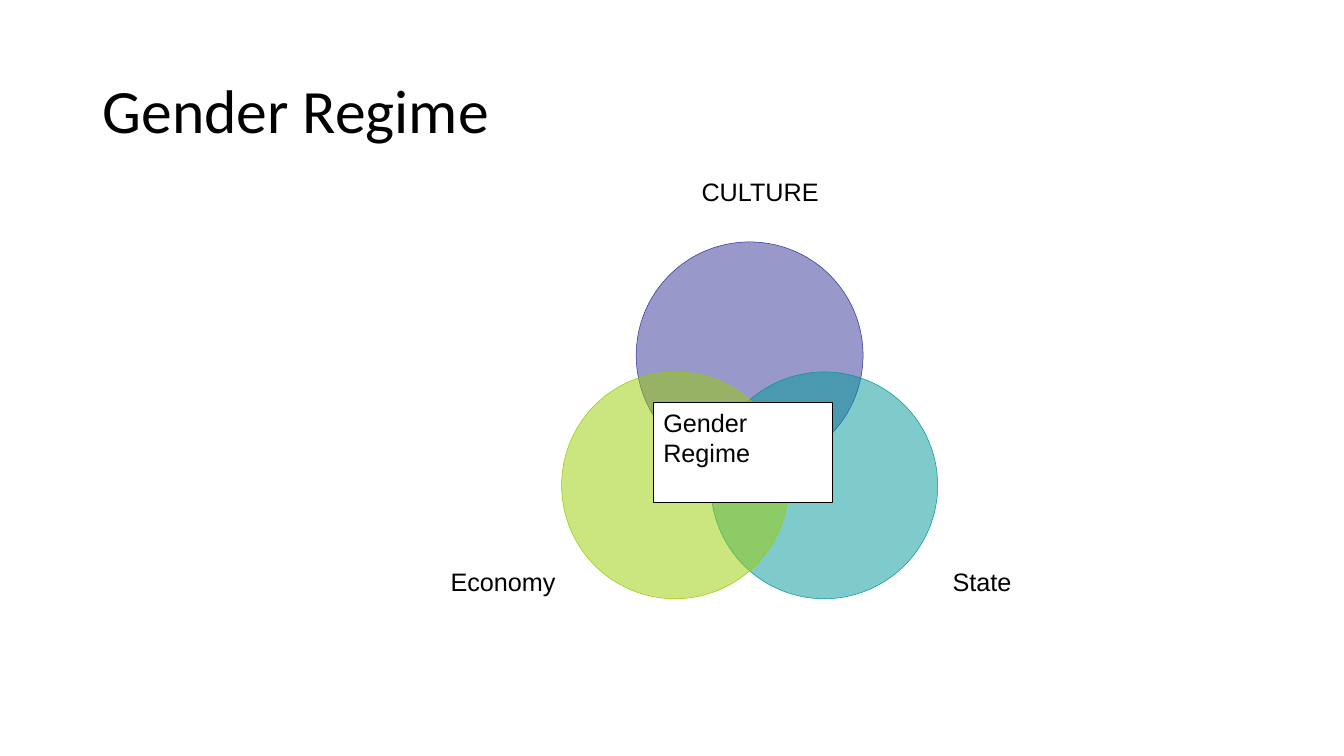
from lxml.etree import SubElement
from pptx import Presentation
from pptx.dml.color import RGBColor
from pptx.enum.shapes import MSO_SHAPE
from pptx.enum.text import MSO_ANCHOR, PP_ALIGN
from pptx.oxml.ns import qn
from pptx.util import Inches, Pt

COLORS = {
    "text": "000000",
    "box": "FFFFFF",
    "culture": "333399",
    "state": "009999",
    "economy": "99CC00",
}
DIAMETER = 2.25

# Circle position, label text and label box for each part of the regime
SPHERES = [
    ("culture", (6.31, 2.4), "CULTURE", (6.86, 1.62, 1.55, 0.56)),
    ("state", (7.05, 3.69), "State", (9.35, 5.49, 1.15, 0.56)),
    ("economy", (5.57, 3.69), "Economy", (4.37, 5.49, 1.48, 0.56)),
]


def color(name):
    return RGBColor.from_string(COLORS[name])


def write(shape, text, size=18, font="Arial", anchor=MSO_ANCHOR.MIDDLE, spacing=None):
    frame = shape.text_frame
    frame.word_wrap = True
    frame.vertical_anchor = anchor
    paragraph = frame.paragraphs[0]
    paragraph.alignment = PP_ALIGN.LEFT
    paragraph.line_spacing = spacing
    run = paragraph.add_run()
    run.text = text
    run.font.name = font
    run.font.size = Pt(size)
    run.font.color.rgb = color("text")


def add_label(slide, text, box, **text_format):
    label = slide.shapes.add_textbox(*map(Inches, box))
    write(label, text, **text_format)


def add_filled(slide, kind, box, fill, line, line_width, opacity=100):
    filled = slide.shapes.add_shape(kind, *map(Inches, box))
    filled.shadow.inherit = False
    filled.fill.solid()
    filled.fill.fore_color.rgb = color(fill)
    filled.line.color.rgb = color(line)
    filled.line.width = Pt(line_width)
    if opacity < 100:
        fill_color = filled.fill._xPr.find(qn("a:solidFill"))[0]
        SubElement(fill_color, qn("a:alpha"), val=str(opacity * 1000))
    return filled


def main():
    deck = Presentation()
    deck.slide_width, deck.slide_height = Inches(13.33), Inches(7.5)
    slide = deck.slides.add_slide(deck.slide_layouts[6])

    # Title
    add_label(slide, "Gender Regime", (0.92, 0.4, 11.5, 1.45),
              size=44, font="Calibri", spacing=0.9)

    # Overlapping circles with their labels
    for sphere, position, name, label_box in SPHERES:
        add_filled(slide, MSO_SHAPE.OVAL, (*position, DIAMETER, DIAMETER),
                   sphere, sphere, 0.37, opacity=50)
        add_label(slide, name, label_box)

    # Box over the shared centre
    centre = add_filled(slide, MSO_SHAPE.RECTANGLE, (6.48, 3.99, 1.78, 1),
                        "box", "text", 0.75)
    write(centre, "Gender Regime", anchor=MSO_ANCHOR.TOP)

    deck.save("out.pptx")


if __name__ == "__main__":
    main()
